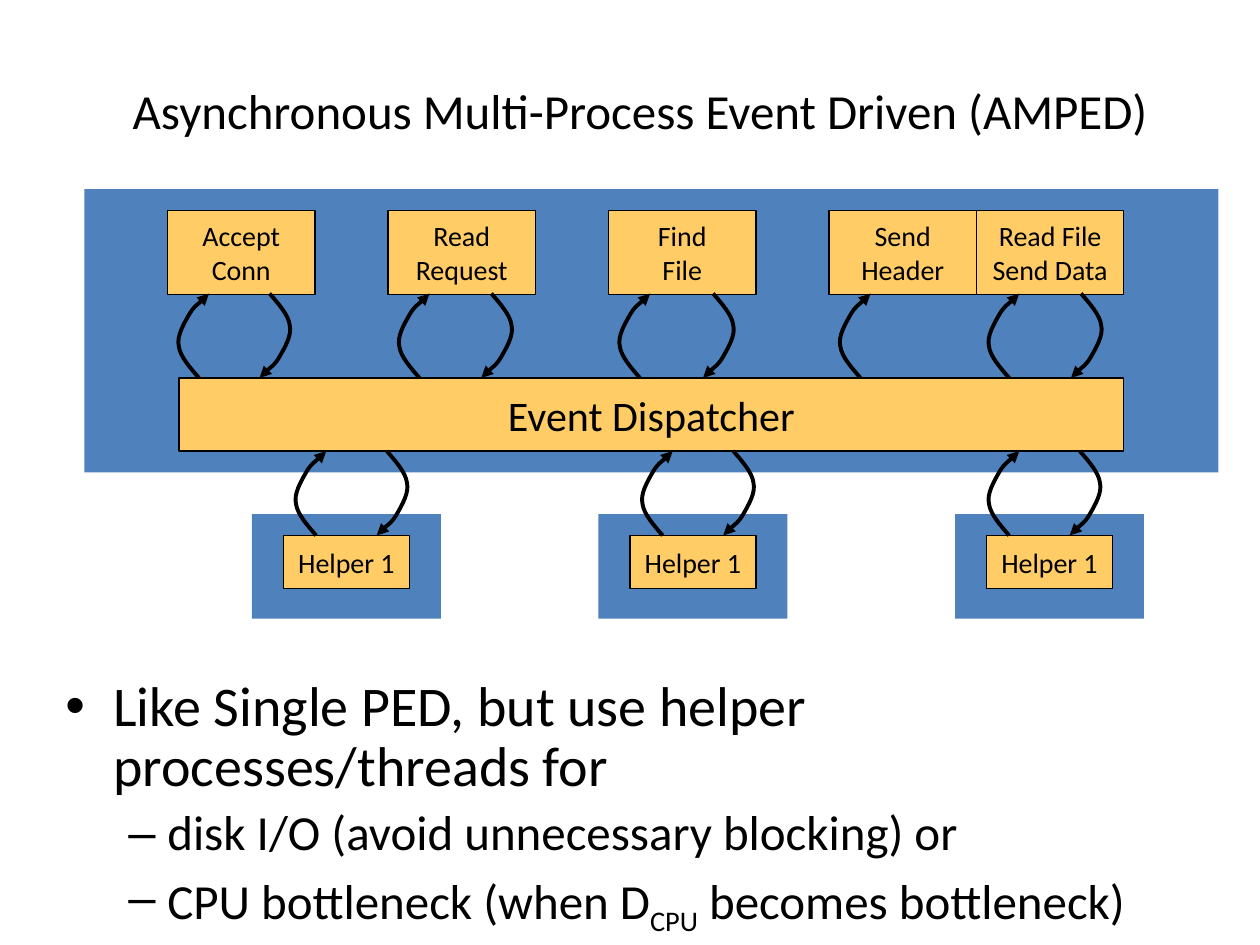
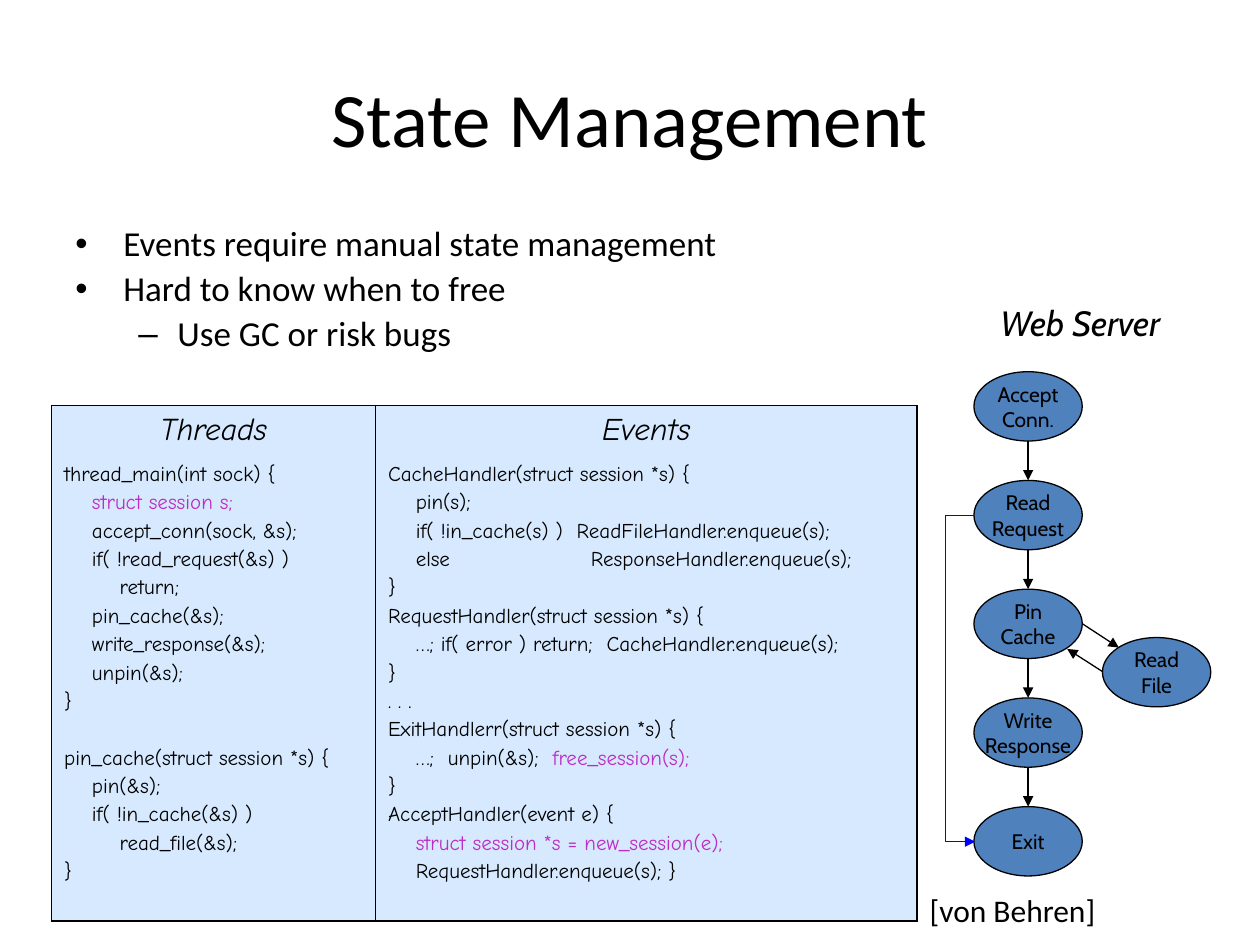
from lxml import etree
from pptx import Presentation
from pptx.dml.color import RGBColor
from pptx.enum.shapes import MSO_CONNECTOR, MSO_SHAPE
from pptx.enum.text import MSO_ANCHOR, PP_ALIGN
from pptx.oxml.ns import qn
from pptx.util import Inches, Pt

BLACK, BLUE, AMBER = "000000", "4F81BD", "FFCC66"
PALE, PURPLE, RETURN_BLUE = "D6E9FE", "BC2DC3", "0000FF"
BODY_FONT, CODE_FONT, NODE_FONT = "Calibri", "Comic Neue", "Cabin"
CODE_INDENT = 0.22

# Curved arrow going up, in inches: the start, then three points per Bezier segment
CURVE_WIDTH, CURVE_HEIGHT = 0.26, 0.67
CURVE_POINTS = [
    (0.18, 0.67),
    (0.11, 0.59), (0.03, 0.5), (0.02, 0.42),
    (0, 0.34), (0.06, 0.24), (0.1, 0.17),
    (0.14, 0.1), (0.24, 0.03), (0.26, 0),
]


def color(hex_string):
    return RGBColor.from_string(hex_string)


class Deck:
    def __init__(self):
        self.presentation = Presentation()
        self.presentation.slide_width = Inches(10)
        self.presentation.slide_height = Inches(7.5)
        self.slide = None

    def new_slide(self):
        layout = self.presentation.slide_layouts[6]
        self.slide = self.presentation.slides.add_slide(layout)

    # Text
    def add_run(self, paragraph, text, size, font=BODY_FONT, fill=BLACK, italic=False):
        run = paragraph.add_run()
        run.text = text
        run.font.size = Pt(size)
        run.font.name = font
        run.font.italic = italic
        run.font.color.rgb = color(fill)
        return run

    def text_box(self, left, top, width, height):
        box = self.slide.shapes.add_textbox(*map(Inches, (left, top, width, height)))
        box.text_frame.word_wrap = True
        return box.text_frame

    def label(self, left, top, width, height, text, size, font=BODY_FONT, italic=False):
        frame = self.text_box(left, top, width, height)
        self.add_run(frame.paragraphs[0], text, size, font, italic=italic)
        return frame

    def title(self, left, top, width, height, text, size):
        frame = self.label(left, top, width, height, text, size)
        frame.vertical_anchor = MSO_ANCHOR.MIDDLE
        frame.paragraphs[0].alignment = PP_ALIGN.CENTER

    def paragraphs(self, frame, items, size):
        """Yield a paragraph for each item, spaced by a fifth of the text size."""
        for index, item in enumerate(items):
            paragraph = frame.add_paragraph() if index else frame.paragraphs[0]
            if index:
                paragraph.space_before = Pt(size * 0.2)
            yield paragraph, item

    def bullets(self, left, top, width, height, items):
        """Each item is (level, size, parts); a part is text, or (text, baseline)."""
        frame = self.text_box(left, top, width, height)
        for paragraph, (level, size, parts) in self.paragraphs(frame, items, items[-1][1]):
            paragraph.level = level
            paragraph.line_spacing = 0.9
            margin, hang, mark = ((0.38, 0.38, "•"), (0.81, 0.31, "–"))[level]
            properties = paragraph._p.get_or_add_pPr()
            properties.set("marL", str(Inches(margin)))
            properties.set("indent", str(-Inches(hang)))
            etree.SubElement(properties, qn("a:buFont")).set("typeface", "Arial")
            etree.SubElement(properties, qn("a:buChar")).set("char", mark)
            for part in parts:
                text, baseline = part if isinstance(part, tuple) else (part, 0)
                run = self.add_run(paragraph, text, size)
                if baseline:
                    run._r.get_or_add_rPr().set("baseline", str(baseline * 1000))

    # Shapes
    def shape(self, kind, left, top, width, height, fill, outline=True):
        shape = self.slide.shapes.add_shape(kind, *map(Inches, (left, top, width, height)))
        shape.shadow.inherit = False
        shape.fill.solid()
        shape.fill.fore_color.rgb = color(fill)
        if outline:
            shape.line.color.rgb = color(BLACK)
            shape.line.width = Pt(0.75)
        else:
            shape.line.fill.background()
        frame = shape.text_frame
        frame.word_wrap = False
        frame.vertical_anchor = MSO_ANCHOR.MIDDLE
        frame.paragraphs[0].alignment = PP_ALIGN.CENTER
        return frame

    def panel(self, left, top, width, height):
        self.shape(MSO_SHAPE.RECTANGLE, left, top, width, height, BLUE, outline=False)

    def box(self, left, top, width, height, lines, size=16):
        frame = self.shape(MSO_SHAPE.RECTANGLE, left, top, width, height, AMBER)
        for index, line in enumerate(lines):
            paragraph = frame.add_paragraph() if index else frame.paragraphs[0]
            paragraph.alignment = PP_ALIGN.CENTER
            self.add_run(paragraph, line, size)

    def node(self, left, top, lines):
        frame = self.shape(MSO_SHAPE.OVAL, left, top, 0.86, 0.55, BLUE)
        paragraph = frame.paragraphs[0]
        for index, line in enumerate(lines):
            if index:
                paragraph.add_line_break()
            self.add_run(paragraph, line, 12, NODE_FONT)

    # Arrows
    def arrow_line(self, shape, fill, width):
        shape.line.color.rgb = color(fill)
        shape.line.width = Pt(width)
        etree.SubElement(shape.line._get_or_add_ln(), qn("a:tailEnd")).set("type", "triangle")

    def arrow(self, start, end, fill=BLACK, kind=MSO_CONNECTOR.STRAIGHT):
        connector = self.slide.shapes.add_connector(kind, *map(Inches, (*start, *end)))
        self.arrow_line(connector, fill, 0.75)
        etree.SubElement(connector._element.spPr, qn("a:effectLst"))
        return connector

    def elbow_arrow(self, start, end, bend_x, fill):
        connector = self.arrow(start, end, fill, MSO_CONNECTOR.ELBOW)
        share = (bend_x - start[0]) / (end[0] - start[0])
        geometry = connector._element.spPr.find(qn("a:prstGeom"))
        guides = geometry.find(qn("a:avLst"))
        if guides is None:
            guides = etree.SubElement(geometry, qn("a:avLst"))
        guide = etree.SubElement(guides, qn("a:gd"))
        guide.set("name", "adj1")
        guide.set("fmla", f"val {round(share * 100000)}")

    def curved_arrow(self, left, top, down=False):
        points = CURVE_POINTS
        if down:  # the downward arrow is the upward one turned by half
            points = [(CURVE_WIDTH - x, CURVE_HEIGHT - y) for x, y in points]
        points = [(Inches(left + x), Inches(top + y)) for x, y in points]
        builder = self.slide.shapes.build_freeform(*points[0])
        builder.add_line_segments(points[1:], close=False)
        shape = builder.convert_to_shape()
        # Join each three straight segments into one Bezier segment
        segments = list(shape._element.iter(qn("a:lnTo")))
        for index in range(0, len(segments), 3):
            curve = etree.Element(qn("a:cubicBezTo"))
            segments[index].addprevious(curve)
            for segment in segments[index:index + 3]:
                curve.append(segment[0])
                segment.getparent().remove(segment)
        shape.shadow.inherit = False
        shape.fill.background()
        self.arrow_line(shape, BLACK, 2.25)

    # Table
    def border(self, cell, sides):
        """Draw the named sides and switch the others off."""
        properties = cell._tc.get_or_add_tcPr()
        for index, side in enumerate("LRTB"):
            line = etree.Element(qn(f"a:ln{side}"), w=str(Pt(1)))
            if side in sides:
                fill = etree.SubElement(line, qn("a:solidFill"))
                etree.SubElement(fill, qn("a:srgbClr")).set("val", BLACK)
            else:
                etree.SubElement(line, qn("a:noFill"))
            properties.insert(index, line)

    def code(self, frame, lines):
        """Each line is (indent level, part, ...); a part is text, or (text, colour)."""
        for paragraph, (level, *parts) in self.paragraphs(frame, lines, 12):
            properties = paragraph._p.get_or_add_pPr()
            if "\t" in parts[0]:
                stops = etree.SubElement(properties, qn("a:tabLst"))
                for position in (CODE_INDENT, 1.61):
                    etree.SubElement(stops, qn("a:tab"), pos=str(Inches(position)), algn="l")
            else:
                properties.set("marL", str(Inches(level * CODE_INDENT)))
                properties.set("indent", "0")
            for part in parts:
                text, fill = part if isinstance(part, tuple) else (part, BLACK)
                self.add_run(paragraph, text, 12, CODE_FONT, fill)

    def code_table(self, left, top, widths, heights, columns):
        table = self.slide.shapes.add_table(
            2, len(columns), *map(Inches, (left, top, sum(widths), sum(heights)))).table
        for row, height in zip(table.rows, heights):
            row.height = Inches(height)
        for index, (heading, lines) in enumerate(columns):
            table.columns[index].width = Inches(widths[index])
            header, body = table.cell(0, index), table.cell(1, index)
            for cell, sides in ((header, "LRT"), (body, "LRB")):
                cell.fill.solid()
                cell.fill.fore_color.rgb = color(PALE)
                self.border(cell, sides)
            paragraph = header.text_frame.paragraphs[0]
            paragraph.alignment = PP_ALIGN.CENTER
            self.add_run(paragraph, heading, 18, CODE_FONT, italic=True)
            self.code(body.text_frame, lines)
        return table


def amped_slide(deck):
    deck.new_slide()
    helper_lefts = (2, 4.75, 7.58)
    for left in helper_lefts:
        deck.panel(left, 4.08, 1.5, 0.83)
    deck.title(0.08, 0.5, 10, 0.75, "Asynchronous Multi-Process Event Driven (AMPED)", 28)
    deck.bullets(0.42, 5.33, 9.17, 1.17, [
        (0, 32, ["Like Single PED, but use helper processes/threads for"]),
        (1, 28, ["disk I/O (avoid unnecessary blocking) or"]),
        (1, 28, ["CPU bottleneck (when D", ("CPU", -25), " becomes bottleneck)"]),
    ])

    # Main process: request steps above the dispatcher
    deck.panel(0.67, 1.5, 9, 2.25)
    steps = [(1.33, "Accept", "Conn"), (3.08, "Read", "Request"), (4.83, "Find", "File"),
             (6.58, "Send", "Header"), (7.75, "Read File", "Send Data")]
    for left, *lines in steps:
        deck.box(left, 1.67, 1.17, 0.67, lines)
    deck.box(1.42, 3, 7.5, 0.58, ["Event Dispatcher"], 24)
    for left in (1.4, 3.15, 4.9, 6.65, 7.83):
        deck.curved_arrow(left, 2.33)
    for left in (8.5, 5.58, 3.82, 2.06):
        deck.curved_arrow(left, 2.33, down=True)

    # Helper processes
    for left in helper_lefts:
        deck.box(left + 0.25, 4.25, 1, 0.42, ["Helper 1"])
    for left in (2.33, 5.08, 7.83):
        deck.curved_arrow(left, 3.58)
        deck.curved_arrow(left + 0.66, 3.58, down=True)


def state_slide(deck):
    deck.new_slide()
    deck.title(0.5, 0.3, 9, 1.25, "State Management", 44)

    # Code comparison
    threads = [
        (0, "thread_main(int sock) {"), (1, ("struct session s;", PURPLE)),
        (1, "accept_conn(sock, &s);"), (1, "if( !read_request(&s) )"), (2, "return;"),
        (1, "pin_cache(&s);"), (1, "write_response(&s);"), (1, "unpin(&s);"), (0, "}"),
        (0, "pin_cache(struct session *s) {"), (1, "pin(&s);"),
        (1, "if( !in_cache(&s) )"), (2, "read_file(&s);"), (0, "}"),
    ]
    events = [
        (0, "CacheHandler(struct session *s) {"), (1, "pin(s);"),
        (1, "if( !in_cache(s) )  ReadFileHandler.enqueue(s);"),
        (1, "\telse\tResponseHandler.enqueue(s);"), (0, "}"),
        (0, "RequestHandler(struct session *s) {"),
        (1, "…; if( error ) return;  CacheHandler.enqueue(s);"), (0, "}"), (0, ". . ."),
        (0, "ExitHandlerr(struct session *s) {"),
        (1, "…;  unpin(&s);", ("  free_session(s);", PURPLE)), (0, "}"),
        (0, "AcceptHandler(event e) {"),
        (1, ("struct session *s = new_session(e);", PURPLE)),
        (1, "RequestHandler.enqueue(s); }"),
    ]
    table = deck.code_table(0.41, 3.22, (2.57, 4.3), (0.33, 3.69),
                            [("Threads", threads), ("Events", events)])
    second_function = table.cell(1, 0).text_frame.paragraphs[9]
    second_function.space_before = Pt(18.6)

    # Web server flow
    stages = [("Accept", "Conn."), ("Read", "Request"), ("Pin", "Cache"),
              ("Write", "Response"), ("Exit",)]
    pitch = 0.863
    for index, lines in enumerate(stages):
        top = 2.95 + pitch * index
        deck.node(7.73, top, lines)
        if index:
            deck.arrow((8.16, top - pitch + 0.55), (8.16, top))
    deck.node(8.75, 5.06, ("Read", "File"))
    deck.arrow((8.59, 4.95), (8.88, 5.14))
    deck.arrow((8.75, 5.33), (8.47, 5.15))
    deck.label(7.84, 2.34, 1.62, 0.43, "Web Server", 20, NODE_FONT, italic=True)
    deck.elbow_arrow((7.73, 4.09), (7.74, 6.68), 7.5, RETURN_BLUE)

    deck.bullets(0.5, 1.75, 7.32, 1.18, [
        (0, 20, ["Events require manual state management"]),
        (0, 20, ["Hard to know when to free"]),
        (1, 20, ["Use GC or risk bugs"]),
    ])
    deck.label(7.28, 7.02, 1.62, 0.4, "[von Behren]", 18)


def main():
    deck = Deck()
    amped_slide(deck)
    state_slide(deck)
    deck.presentation.save("out.pptx")


if __name__ == "__main__":
    main()
